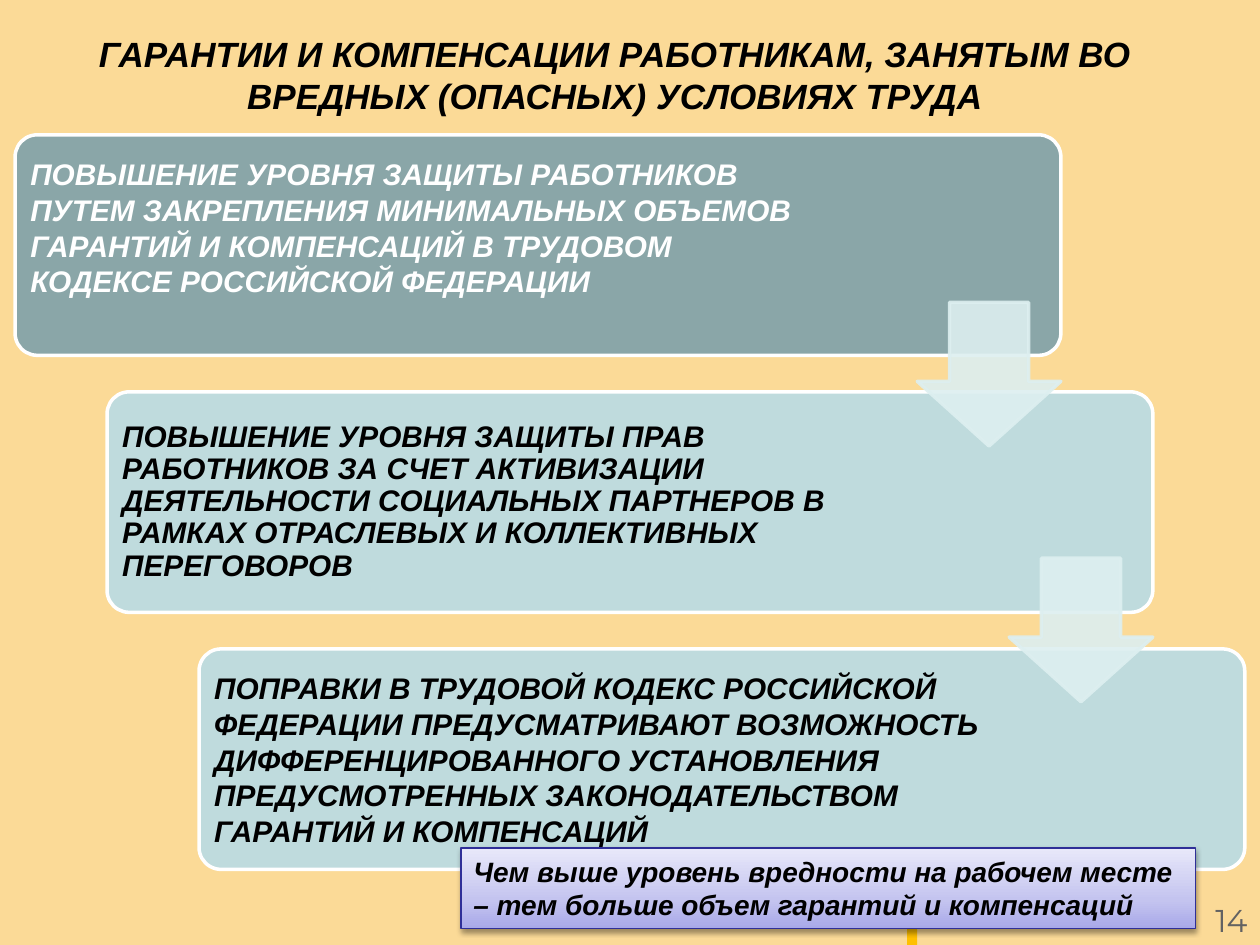
from lxml.etree import SubElement
from pptx import Presentation
from pptx.dml.color import RGBColor
from pptx.enum.shapes import MSO_SHAPE
from pptx.enum.text import MSO_ANCHOR, MSO_AUTO_SIZE, PP_ALIGN
from pptx.oxml import parse_xml
from pptx.oxml.ns import nsdecls, qn
from pptx.util import Inches, Pt

THEME = {
    "background": "FBDA97", "accent": "FFC000", "text": "000000", "light": "FFFFFF",
    "first_card": "8AA6A8", "card": "BFDBDD", "arrow": "DDEFF0",
    "number": "626262", "callout_line": "2F2F98",
    "callout_stops": [(0, "A9A9E9"), (35, "C4C4EF"), (100, "E8E8FA")],
    "font": "Arial", "number_font": "Montserrat",
    "title_size": 20, "card_size": 17, "callout_size": 16, "number_size": 18,
}

TITLE = "ГАРАНТИИ И КОМПЕНСАЦИИ РАБОТНИКАМ, ЗАНЯТЫМ ВО ВРЕДНЫХ (ОПАСНЫХ) УСЛОВИЯХ ТРУДА"
CARDS = [
    {"text": "ПОВЫШЕНИЕ УРОВНЯ ЗАЩИТЫ РАБОТНИКОВ ПУТЕМ ЗАКРЕПЛЕНИЯ МИНИМАЛЬНЫХ ОБЪЕМОВ "
             "ГАРАНТИЙ И КОМПЕНСАЦИЙ В ТРУДОВОМ КОДЕКСЕ РОССИЙСКОЙ ФЕДЕРАЦИИ",
     "fill": "first_card", "color": "light", "width": 6.41, "bottom": 0.35, "spacing": 1},
    {"text": "ПОВЫШЕНИЕ УРОВНЯ ЗАЩИТЫ ПРАВ РАБОТНИКОВ ЗА СЧЕТ АКТИВИЗАЦИИ ДЕЯТЕЛЬНОСТИ "
             "СОЦИАЛЬНЫХ ПАРТНЕРОВ В РАМКАХ ОТРАСЛЕВЫХ И КОЛЛЕКТИВНЫХ ПЕРЕГОВОРОВ",
     "fill": "card", "color": "text", "width": 6.33, "bottom": 0.07, "spacing": 0.9},
    {"text": "ПОПРАВКИ В ТРУДОВОЙ КОДЕКС РОССИЙСКОЙ ФЕДЕРАЦИИ ПРЕДУСМАТРИВАЮТ ВОЗМОЖНОСТЬ "
             "ДИФФЕРЕНЦИРОВАННОГО УСТАНОВЛЕНИЯ ПРЕДУСМОТРЕННЫХ ЗАКОНОДАТЕЛЬСТВОМ "
             "ГАРАНТИЙ И КОМПЕНСАЦИЙ",
     "fill": "card", "color": "text", "width": 6.33, "bottom": 0.07, "spacing": 1},
]
CALLOUT = "Чем выше уровень вредности на рабочем месте – тем больше объем гарантий и компенсаций"
PAGE_NUMBER = "14"

CARD_LEFT, CARD_TOP, CARD_WIDTH, CARD_HEIGHT = 0.12, 1.07, 8.3, 1.75
STEP_X, STEP_Y = 0.73, 2.04
TEXT_OFFSET, CARD_INSET = 0.05, 0.07
ARROW_SIZE = 1.14
ARROW_TOP, ARROW_STEP_Y = 2.4, 2.03


def color(name):
    return RGBColor.from_string(THEME[name])


def write_text(shape, text, size, color_name="text", font="font", bold=True, italic=True,
               align=PP_ALIGN.LEFT, anchor=MSO_ANCHOR.TOP, spacing=1,
               insets=(0.1, 0.05, 0.1, 0.05)):
    frame = shape.text_frame
    frame.word_wrap = True
    frame.auto_size = MSO_AUTO_SIZE.NONE
    frame.vertical_anchor = anchor
    (frame.margin_left, frame.margin_top,
     frame.margin_right, frame.margin_bottom) = map(Inches, insets)
    paragraph = frame.paragraphs[0]
    paragraph.alignment = align
    paragraph.line_spacing = spacing
    run = paragraph.add_run()
    run.text = text
    run.font.name = THEME[font]
    run.font.size = Pt(THEME[size])
    run.font.bold, run.font.italic = bold, italic
    run.font.color.rgb = color(color_name)


def add_text_box(slide, box, text, size, **text_format):
    shape = slide.shapes.add_textbox(*map(Inches, box))
    write_text(shape, text, size, **text_format)


def add_block(slide, kind, box, fill, line=None, line_width=2, adjustments=()):
    shape = slide.shapes.add_shape(kind, *map(Inches, box))
    shape.shadow.inherit = False
    shape.fill.solid()
    shape.fill.fore_color.rgb = color(fill)
    if line:
        shape.line.color.rgb = color(line)
        shape.line.width = Pt(line_width)
    else:
        shape.line.fill.background()
    for index, value in enumerate(adjustments):
        shape.adjustments[index] = value
    return shape


def set_opacity(shape, percent):
    """Apply the opacity to both the fill and the line."""
    for element in shape.fill._xPr.iter(qn("a:srgbClr")):
        SubElement(element, qn("a:alpha"), val=str(percent * 1000))


def style_callout(shape):
    """Give the callout its three-stop gradient and its soft shadow."""
    properties = shape.fill._xPr
    stops = "".join(f'<a:gs pos="{position * 1000}"><a:srgbClr val="{value}"/></a:gs>'
                    for position, value in THEME["callout_stops"])
    gradient = parse_xml(f'<a:gradFill {nsdecls("a")} rotWithShape="1"><a:gsLst>{stops}</a:gsLst>'
                         '<a:lin ang="16200000" scaled="0"/></a:gradFill>')
    properties.replace(properties.find(qn("a:solidFill")), gradient)
    shadow = parse_xml(
        f'<a:outerShdw {nsdecls("a")} blurRad="{Pt(3.1)}" dist="{Pt(1.6)}" dir="5400000" '
        'rotWithShape="0"><a:srgbClr val="000000"><a:alpha val="38000"/></a:srgbClr></a:outerShdw>')
    properties.find(qn("a:effectLst")).append(shadow)


def add_title(slide):
    title = slide.shapes.title
    title.left, title.top, title.width, title.height = map(Inches, (0.35, 0.21, 9.06, 0.77))
    write_text(title, TITLE, "title_size", align=PP_ALIGN.CENTER)


def add_staircase(slide):
    for index, card in enumerate(CARDS):
        left, top = CARD_LEFT + index * STEP_X, CARD_TOP + index * STEP_Y
        add_block(slide, MSO_SHAPE.ROUNDED_RECTANGLE, (left, top, CARD_WIDTH, CARD_HEIGHT),
                  card["fill"], line="light", adjustments=[0.1])
        text_box = (left + TEXT_OFFSET, top + TEXT_OFFSET,
                    card["width"], CARD_HEIGHT - 2 * TEXT_OFFSET)
        add_text_box(slide, text_box, card["text"], "card_size", color_name=card["color"],
                     anchor=MSO_ANCHOR.MIDDLE, spacing=card["spacing"],
                     insets=(CARD_INSET, CARD_INSET, CARD_INSET, card["bottom"]))
    for index in range(len(CARDS) - 1):
        left = CARD_LEFT + CARD_WIDTH - ARROW_SIZE + index * STEP_X
        arrow = add_block(slide, MSO_SHAPE.DOWN_ARROW,
                          (left, ARROW_TOP + index * ARROW_STEP_Y, ARROW_SIZE, ARROW_SIZE),
                          "arrow", line="arrow", adjustments=[0.55, 0.45])
        set_opacity(arrow, 90)


def main():
    presentation = Presentation()
    presentation.slide_width, presentation.slide_height = Inches(10), Inches(7.5)
    slide = presentation.slides.add_slide(presentation.slide_layouts[5])
    slide.background.fill.solid()
    slide.background.fill.fore_color.rgb = color("background")

    add_text_box(slide, (9.44, 7.1, 0.56, 0.4), PAGE_NUMBER, "number_size", color_name="number",
                 font="number_font", bold=False, italic=False, align=PP_ALIGN.RIGHT)
    add_block(slide, MSO_SHAPE.RECTANGLE, (7.2, 7.37, 0.08, 0.13), "accent")
    add_title(slide)
    add_staircase(slide)
    callout = add_block(slide, MSO_SHAPE.RECTANGLE, (3.66, 6.73, 5.83, 0.64), "card",
                        line="callout_line", line_width=0.75)
    style_callout(callout)
    write_text(callout, CALLOUT, "callout_size")
    presentation.save("out.pptx")


if __name__ == "__main__":
    main()
